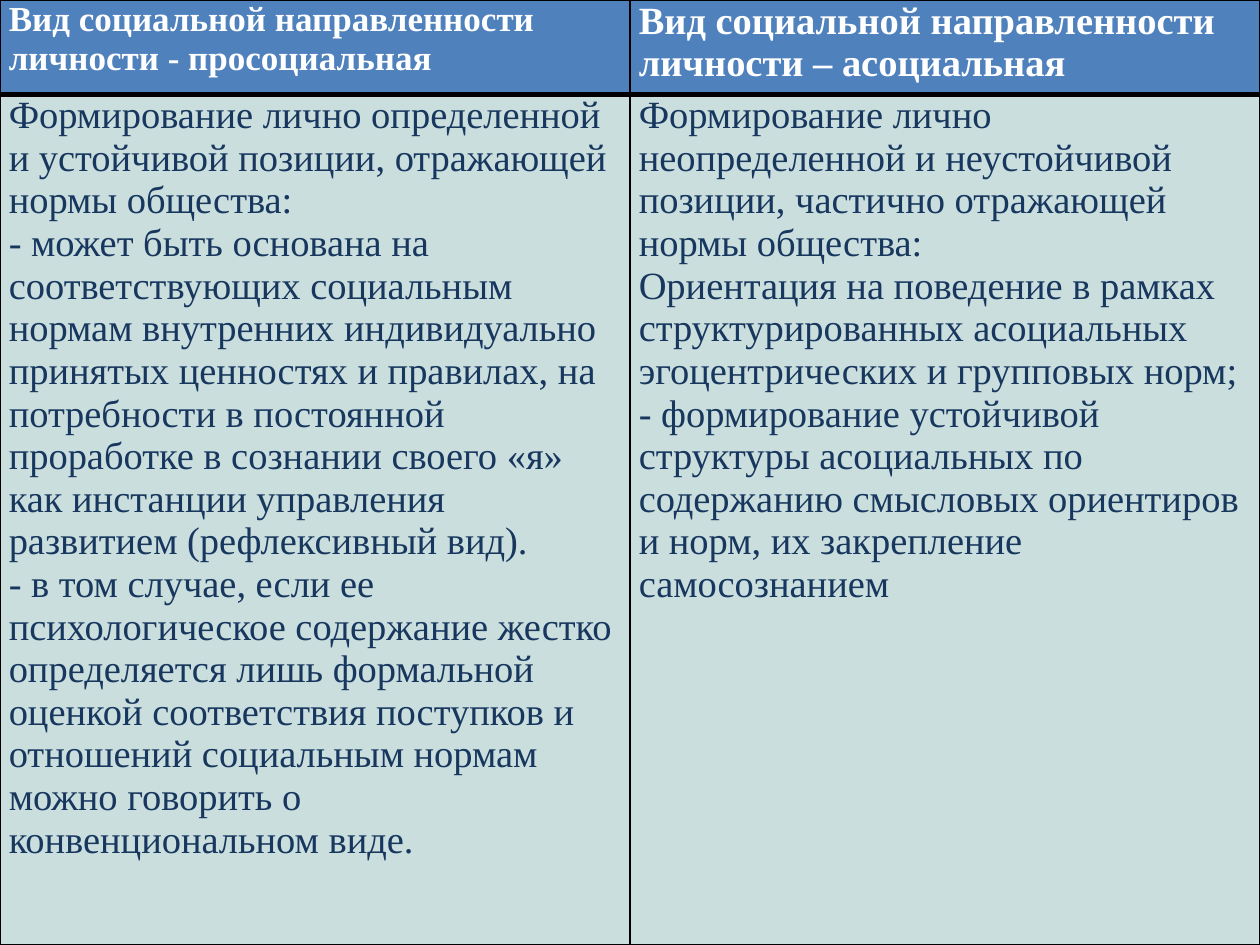
from dataclasses import dataclass

from lxml import etree
from pptx import Presentation
from pptx.dml.color import RGBColor
from pptx.oxml.ns import qn
from pptx.util import Emu, Pt

EMU_PER_PX = 9144  # 100 px to the inch
SLIDE_W, SLIDE_H = 1000, 750
HEADER_H = 75
INSET = 7
FONT = "Times New Roman"
BODY_SIZE = 22
THIN, THICK = 1, 3
COLORS = {
    "header": "4F81BD",
    "header_text": "FFFFFF",
    "body": "CBDEDE",
    "body_text": "17375E",
    "border": "000000",
}


@dataclass(frozen=True)
class Orientation:
    heading: str
    heading_size: int
    description: tuple[str, ...]


ORIENTATIONS = (
    Orientation(
        "Вид социальной направленности личности - просоциальная",
        20,
        (
            "Формирование лично определенной и устойчивой позиции, "
            "отражающей нормы общества:",
            "- может быть основана на соответствующих социальным нормам "
            "внутренних индивидуально принятых ценностях и правилах, на "
            "потребности в постоянной проработке в сознании своего «я» "
            "как инстанции управления развитием (рефлексивный вид).",
            "- в том случае, если ее психологическое содержание жестко "
            "определяется лишь формальной оценкой соответствия поступков "
            "и отношений социальным нормам можно говорить о "
            "конвенциональном виде.",
        ),
    ),
    Orientation(
        "Вид социальной направленности личности – асоциальная",
        22,
        (
            "Формирование лично неопределенной и неустойчивой позиции, "
            "частично отражающей нормы общества:",
            "Ориентация на поведение в рамках структурированных "
            "асоциальных эгоцентрических и групповых норм;",
            "- формирование устойчивой структуры асоциальных по "
            "содержанию смысловых ориентиров и норм, их закрепление "
            "самосознанием",
        ),
    ),
)


def px(length: int) -> Emu:
    return Emu(length * EMU_PER_PX)


def color(name: str) -> RGBColor:
    return RGBColor.from_string(COLORS[name])


def set_borders(cell, top: int, bottom: int) -> None:
    """Draw the four cell borders, widths in points."""
    properties = cell._tc.get_or_add_tcPr()
    sides = {"lnL": THIN, "lnR": THIN, "lnT": top, "lnB": bottom}
    for position, (side, width) in enumerate(sides.items()):
        line = etree.Element(qn(f"a:{side}"), w=str(Pt(width)))
        fill = etree.SubElement(line, qn("a:solidFill"))
        etree.SubElement(fill, qn("a:srgbClr"), val=COLORS["border"])
        properties.insert(position, line)


def fill_cell(cell, paragraphs: tuple[str, ...], size: int, role: str) -> None:
    cell.fill.solid()
    cell.fill.fore_color.rgb = color(role)
    cell.margin_left = cell.margin_right = px(INSET)
    cell.margin_top = cell.margin_bottom = 0
    frame = cell.text_frame
    for number, text in enumerate(paragraphs):
        paragraph = frame.add_paragraph() if number else frame.paragraphs[0]
        run = paragraph.add_run()
        run.text = text
        run.font.name = FONT
        run.font.size = Pt(size)
        run.font.bold = role == "header"
        run.font.color.rgb = color(f"{role}_text")


def main() -> None:
    prs = Presentation()
    prs.slide_width, prs.slide_height = px(SLIDE_W), px(SLIDE_H)
    slide = prs.slides.add_slide(prs.slide_layouts[6])

    # Comparison table covering the slide
    comparison = slide.shapes.add_table(
        2, len(ORIENTATIONS), 0, 0, px(SLIDE_W), px(SLIDE_H)
    ).table
    comparison.horz_banding = False
    comparison.rows[0].height = px(HEADER_H)
    comparison.rows[1].height = px(SLIDE_H - HEADER_H)

    # One column per orientation: heading above description
    for column, orientation in enumerate(ORIENTATIONS):
        heading = comparison.cell(0, column)
        fill_cell(heading, (orientation.heading,), orientation.heading_size, "header")
        set_borders(heading, THIN, THICK)
        description = comparison.cell(1, column)
        fill_cell(description, orientation.description, BODY_SIZE, "body")
        set_borders(description, THICK, THIN)

    prs.save("out.pptx")


if __name__ == "__main__":
    main()
